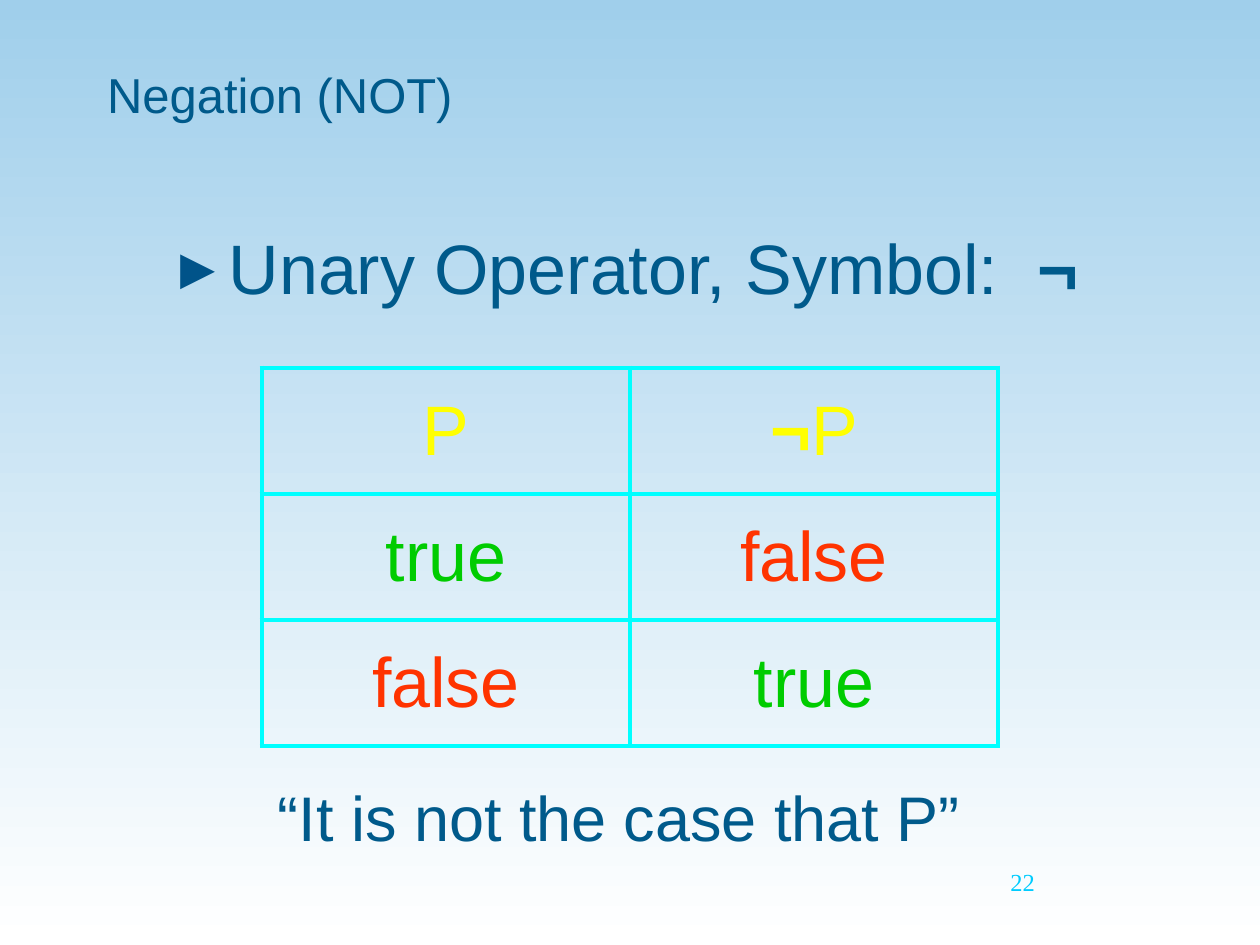
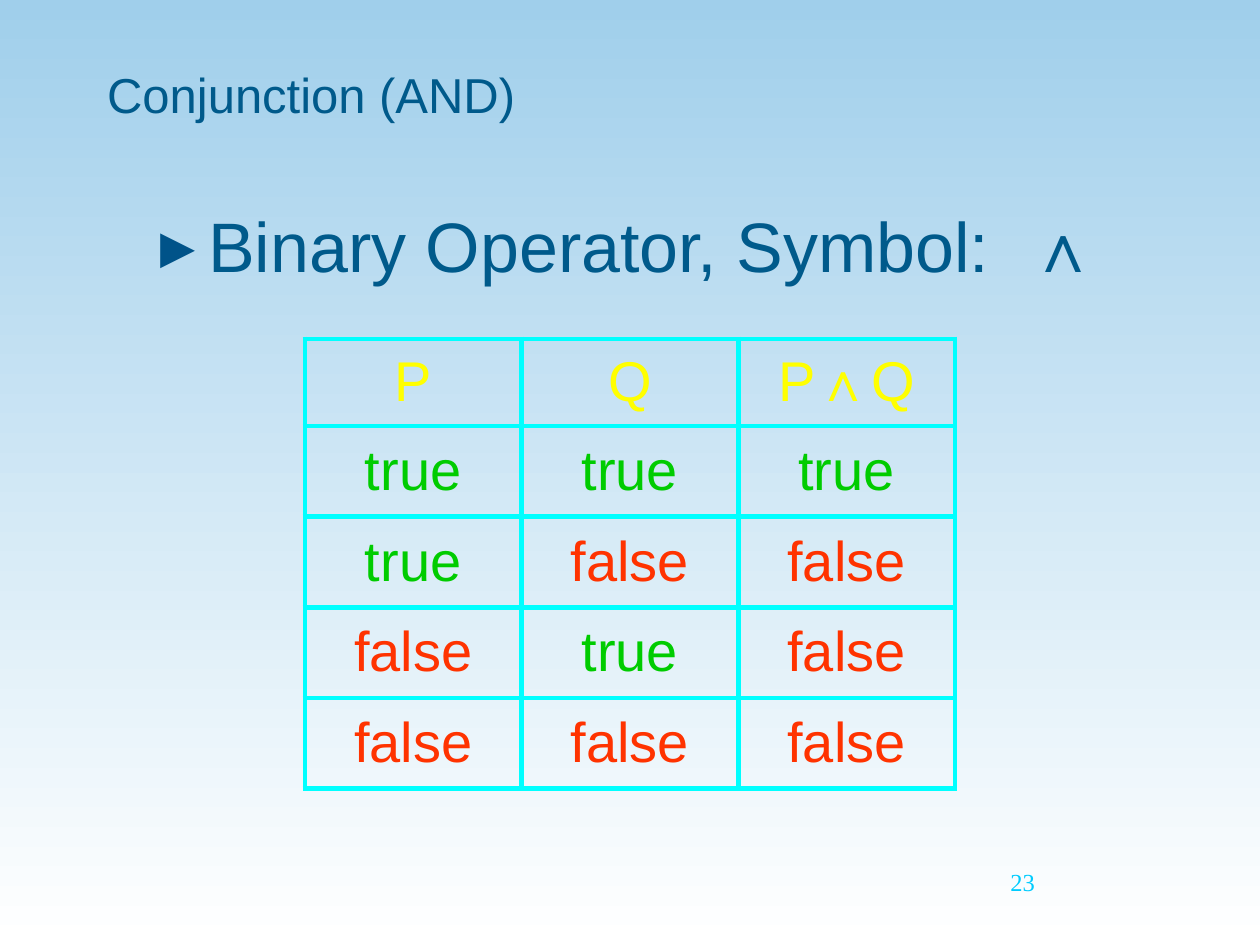
from dataclasses import dataclass
from typing import Optional

from lxml.etree import SubElement
from pptx import Presentation
from pptx.dml.color import RGBColor
from pptx.enum.text import MSO_ANCHOR, MSO_AUTO_SIZE, PP_ALIGN
from pptx.oxml.ns import qn
from pptx.util import Inches, Pt

# Shared style
SKY, WHITE = "A0CFEB", "FFFFFF"
NAVY, BULLET_BLUE, PAGE_BLUE = "005A8B", "005389", "00CCFF"
BORDER_CYAN, HEADER_YELLOW = "00FFFF", "FFFF00"
VALUE_COLORS = {"true": "00CC00", "false": "FF3300"}
OPERATORS = ("¬", "∧")  # set in bold when they stand as a part of their own
BORDER_WIDTH = Pt(3)
HANGING = Inches(0.38)


@dataclass(frozen=True)
class TextStyle:
    size: int
    color: str
    font: str = "Arial"
    align: PP_ALIGN = PP_ALIGN.CENTER


@dataclass(frozen=True)
class Frame:
    left: float
    top: float
    width: float
    height: float


@dataclass(frozen=True)
class TruthTable:
    left: float
    top: float
    column_width: float
    row_heights: tuple[float, ...]
    text_size: int
    header: tuple[tuple[str, ...], ...]
    values: tuple[tuple[str, ...], ...]


@dataclass(frozen=True)
class OperatorSlide:
    title: str
    definition: tuple[str, ...]
    definition_top: float
    number: int
    table: TruthTable
    caption: Optional[str] = None


TITLE_STYLE = TextStyle(28, NAVY, align=PP_ALIGN.LEFT)
DEFINITION_STYLE = TextStyle(40, NAVY)
CAPTION_STYLE = TextStyle(36, NAVY)
NUMBER_STYLE = TextStyle(14, PAGE_BLUE, "Times New Roman", PP_ALIGN.LEFT)

SLIDES = (
    OperatorSlide(
        title="Negation (NOT)",
        definition=("Unary Operator, Symbol:  ", "¬"),
        definition_top=1.67,
        number=22,
        table=TruthTable(
            2.08, 2.92, 2.92, (1,) * 3, 40,
            header=(("P",), ("¬", "P")),
            values=(("true", "false"), ("false", "true")),
        ),
        caption="“It is not the case that P”",
    ),
    OperatorSlide(
        title="Conjunction (AND)",
        definition=("Binary Operator, Symbol:  ", "∧"),
        definition_top=1.5,
        number=23,
        table=TruthTable(
            2.42, 2.69, 1.72, (0.69,) + (0.72,) * 4, 32,
            header=(("P",), ("Q",), ("P∧Q",)),
            values=(
                ("true", "true", "true"),
                ("true", "false", "false"),
                ("false", "true", "false"),
                ("false", "false", "false"),
            ),
        ),
    ),
)


def rgb(color: str) -> RGBColor:
    return RGBColor.from_string(color)


def write(text_frame, parts: tuple[str, ...], style: TextStyle) -> None:
    para = text_frame.paragraphs[0]
    para.alignment = style.align
    para.space_before = Pt(0)
    for part in parts:
        span = para.add_run()
        span.text = part
        span.font.name = style.font
        span.font.size = Pt(style.size)
        span.font.bold = part in OPERATORS
        span.font.color.rgb = rgb(style.color)


def fill_box(box, frame: Frame, parts: tuple[str, ...], style: TextStyle,
             top_inset: float) -> None:
    box.left, box.top = Inches(frame.left), Inches(frame.top)
    box.width, box.height = Inches(frame.width), Inches(frame.height)
    text_frame = box.text_frame
    text_frame.word_wrap = True
    text_frame.auto_size = MSO_AUTO_SIZE.NONE
    text_frame.vertical_anchor = MSO_ANCHOR.TOP
    text_frame.margin_top = Inches(top_inset)
    write(text_frame, parts, style)


def add_text(page, frame: Frame, text: str, style: TextStyle, top_inset: float) -> None:
    box = page.shapes.add_textbox(0, 0, 0, 0)
    fill_box(box, frame, (text,), style, top_inset)


def add_bullet(para) -> None:
    properties = para._p.get_or_add_pPr()
    properties.set("marL", str(HANGING))
    properties.set("indent", str(-HANGING))
    bullet_color = SubElement(properties, qn("a:buClr"))
    SubElement(bullet_color, qn("a:srgbClr"), val=BULLET_BLUE)
    SubElement(properties, qn("a:buChar"), char="▸")


def add_borders(cell) -> None:
    properties = cell._tc.get_or_add_tcPr()
    for side in ("lnL", "lnR", "lnT", "lnB"):
        line = SubElement(properties, qn(f"a:{side}"), w=str(BORDER_WIDTH))
        solid = SubElement(line, qn("a:solidFill"))
        SubElement(solid, qn("a:srgbClr"), val=BORDER_CYAN)


def add_truth_table(page, content: TruthTable) -> None:
    rows, columns = len(content.row_heights), len(content.header)
    table = page.shapes.add_table(
        rows, columns, Inches(content.left), Inches(content.top),
        Inches(content.column_width * columns), Inches(sum(content.row_heights)),
    ).table
    table.first_row = table.horz_banding = False
    for column in table.columns:
        column.width = Inches(content.column_width)
    for row, height in zip(table.rows, content.row_heights):
        row.height = Inches(height)

    value_rows = [[(value,) for value in row] for row in content.values]
    for row, row_parts in zip(table.rows, [content.header, *value_rows]):
        for cell, parts in zip(row.cells, row_parts):
            color = VALUE_COLORS.get(parts[0], HEADER_YELLOW)
            add_borders(cell)
            cell.fill.background()
            cell.vertical_anchor = MSO_ANCHOR.MIDDLE
            write(cell.text_frame, parts, TextStyle(content.text_size, color))


def set_background(deck) -> None:
    fill = deck.slide_master.background.fill
    fill.gradient()
    fill.gradient_angle = 270
    for stop, color in zip(fill.gradient_stops, (SKY, WHITE)):
        stop.color.rgb = rgb(color)


def add_operator_slide(deck, content: OperatorSlide) -> None:
    page = deck.slides.add_slide(deck.slide_layouts[1])

    # Title and definition
    fill_box(page.shapes.title, Frame(0.75, 0.42, 8.5, 0.75),
             (content.title,), TITLE_STYLE, 0.09)
    body = page.placeholders[1]
    fill_box(body, Frame(0.58, content.definition_top, 8.83, 0.92),
             content.definition, DEFINITION_STYLE, 0.11)
    add_bullet(body.text_frame.paragraphs[0])

    # Page number, truth table and reading
    add_text(page, Frame(7.92, 6.83, 2.08, 0.5), str(content.number), NUMBER_STYLE, 0.05)
    add_truth_table(page, content.table)
    if content.caption:
        add_text(page, Frame(0.5, 6.08, 8.83, 0.92), content.caption, CAPTION_STYLE, 0.1)


def main() -> None:
    deck = Presentation()
    deck.slide_width, deck.slide_height = Inches(10), Inches(7.5)
    set_background(deck)
    for content in SLIDES:
        add_operator_slide(deck, content)
    deck.save("out.pptx")


if __name__ == "__main__":
    main()
